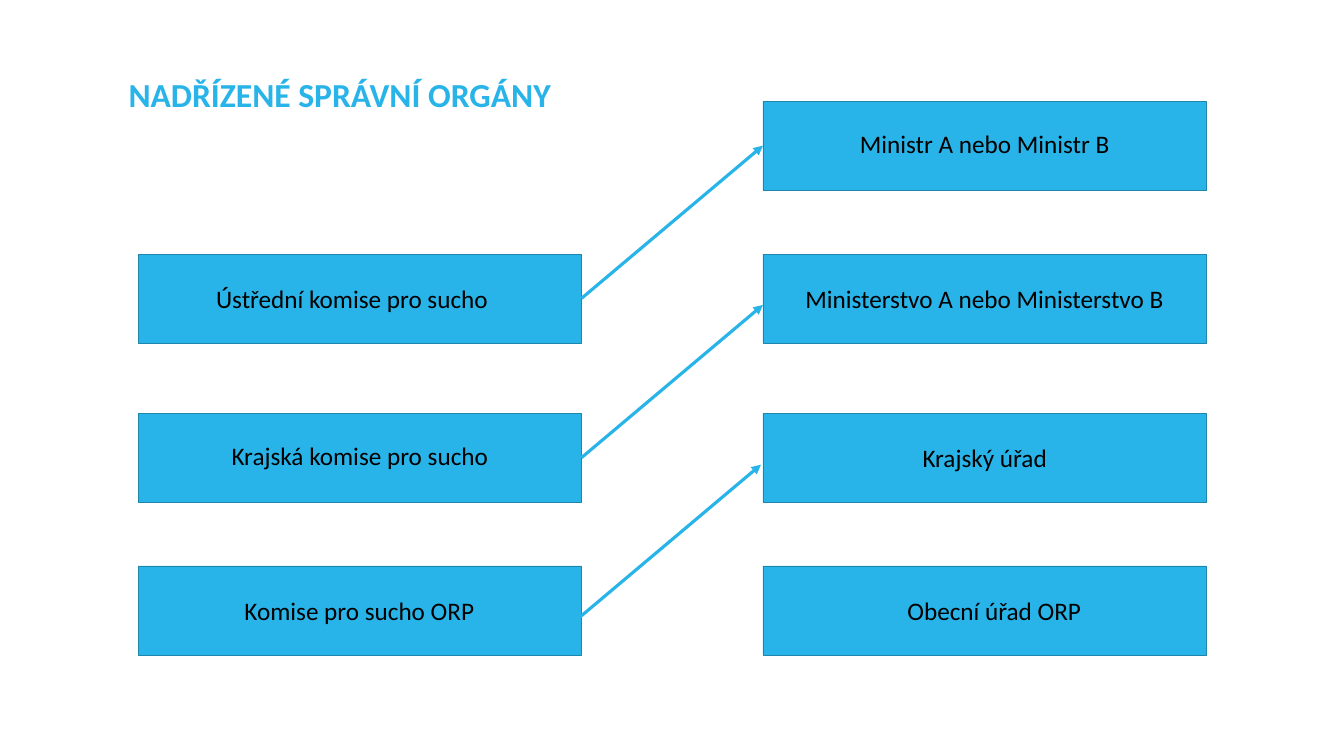
"""Build a slide that links drought commissions to their superior authorities."""
from lxml import etree
from pptx import Presentation
from pptx import oxml
from pptx.dml.color import RGBColor
from pptx.enum import shapes, text
from pptx.util import Inches, Pt

BOX_WIDTH, BOX_HEIGHT = 8.8, 1.77
LEFT_COLUMN, RIGHT_COLUMN = 2.74, 15.14
ROWS = [2.01, 5.04, 8.2, 11.23]
ARROW_RUN, ARROW_RISE = 3.6, 3.03

COMMISSIONS = [
    ("Ústřední komise pro sucho", 3.37, 5.57, 7.23),
    ("Krajská komise pro sucho", 3.89, 8.69, 6.5),
    ("Komise pro sucho ORP", 3.64, 11.77, 6.98),
]
AUTHORITIES = [
    ("Ministr A nebo Ministr B", 15.89, 2.5, 7.3),
    ("Ministerstvo A nebo Ministerstvo B", 15.63, 5.57, 7.81),
    ("Krajský úřad", 15.89, 8.73, 7.3),
    ("Obecní úřad ORP", 16.27, 11.77, 6.92),
]
ARROW_STARTS = [(11.54, 5.92), (11.54, 9.08), (11.5, 12.25)]


def color(value):
    return RGBColor.from_string(value)


def write(frame, words, *, size, fill, bold=False, align=None, spacing=None):
    para = frame.paragraphs[0]
    para.alignment = align
    para.line_spacing = spacing
    span = para.add_run()
    span.text = words
    span.font.name = "Calibri"
    span.font.size = Pt(size)
    span.font.bold = bold
    span.font.color.rgb = color(fill)


class Diagram:
    accent, outline, ink = "29B4E9", "1E85AC", "000000"

    def __init__(self, page):
        self.page = page

    def title(self, words, left, top, width, height):
        box = self.page.shapes.title
        box.left, box.top = Inches(left), Inches(top)
        box.width, box.height = Inches(width), Inches(height)
        frame = box.text_frame
        frame.margin_left = frame.margin_right = 0
        frame.margin_top = frame.margin_bottom = 0
        frame.vertical_anchor = text.MSO_ANCHOR.TOP
        frame.auto_size = text.MSO_AUTO_SIZE.NONE
        write(frame, words, size=48, fill=self.accent, bold=True,
              align=text.PP_ALIGN.LEFT, spacing=0.9)

    def panel(self, left, top):
        box = self.page.shapes.add_shape(
            shapes.MSO_SHAPE.RECTANGLE, Inches(left), Inches(top),
            Inches(BOX_WIDTH), Inches(BOX_HEIGHT))
        box.shadow.inherit = False
        box.fill.solid()
        box.fill.fore_color.rgb = color(self.accent)
        box.line.color.rgb = color(self.outline)
        box.line.width = Pt(1)

    def label(self, words, left, top, width):
        box = self.page.shapes.add_textbox(
            Inches(left), Inches(top), Inches(width), Inches(0.71))
        frame = box.text_frame
        frame.word_wrap = True
        frame.auto_size = text.MSO_AUTO_SIZE.SHAPE_TO_FIT_TEXT
        write(frame, words, size=36, fill=self.ink, align=text.PP_ALIGN.CENTER)

    def arrow(self, left, bottom):
        arrow = self.page.shapes.add_connector(
            shapes.MSO_CONNECTOR.STRAIGHT, Inches(left), Inches(bottom),
            Inches(left + ARROW_RUN), Inches(bottom - ARROW_RISE))
        arrow.line.color.rgb = color(self.accent)
        arrow.line.width = Pt(4.5)
        etree.SubElement(arrow.line._get_or_add_ln(),
                         oxml.ns.qn("a:tailEnd"), type="triangle")
        etree.SubElement(arrow._element.spPr, oxml.ns.qn("a:effectLst"))


def main():
    deck = Presentation()
    deck.slide_width, deck.slide_height = Inches(26.67), Inches(15)
    diagram = Diagram(deck.slides.add_slide(deck.slide_layouts[5]))
    diagram.title("NADŘÍZENÉ SPRÁVNÍ ORGÁNY", 2.55, 1.56, 13.34, 1.34)
    for top in ROWS[1:]:
        diagram.panel(LEFT_COLUMN, top)
    for top in ROWS:
        diagram.panel(RIGHT_COLUMN, top)
    for entry in COMMISSIONS + AUTHORITIES:
        diagram.label(*entry)
    for start in ARROW_STARTS:
        diagram.arrow(*start)
    deck.save("out.pptx")


if __name__ == "__main__":
    main()
